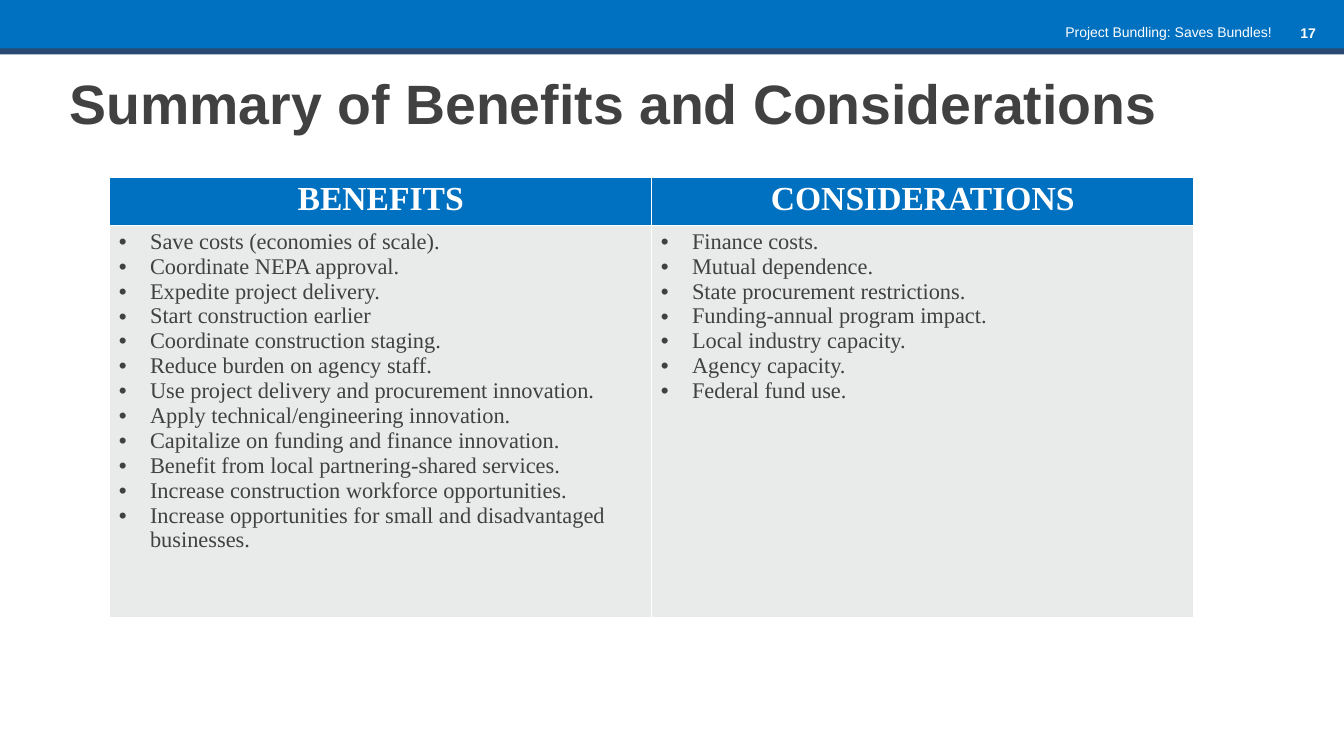
from dataclasses import dataclass

from lxml.etree import SubElement
from pptx import Presentation
from pptx.dml.color import RGBColor
from pptx.enum.shapes import MSO_SHAPE as Shape
from pptx.enum.text import MSO_ANCHOR as Anchor, MSO_AUTO_SIZE as AutoSize, PP_ALIGN as Align
from pptx.oxml.ns import qn
from pptx.util import Inches, Pt

WHITE = RGBColor(0xFF, 0xFF, 0xFF)
BLUE = RGBColor(0x00, 0x70, 0xC0)
NAVY = RGBColor(0x28, 0x49, 0x71)
CHARCOAL = RGBColor(0x41, 0x41, 0x42)
PALE_GRAY = RGBColor(0xE9, 0xEA, 0xEA)

SLIDE_WIDTH = Inches(13.33)
SLIDE_HEIGHT = Inches(7.5)
HEADING_ROW = Inches(0.46)
BODY_ROW = Inches(3.89)
CELL_SIDE = Inches(0.09)
CELL_TOP = Inches(0.04)
BULLET_INDENT = Inches(0.31)


@dataclass(frozen=True)
class Area:
    """Shares of the slide's width and height, in percent."""
    left: float
    top: float
    width: float
    height: float

    def lengths(self) -> tuple[int, int, int, int]:
        return (int(SLIDE_WIDTH * self.left / 100), int(SLIDE_HEIGHT * self.top / 100),
                int(SLIDE_WIDTH * self.width / 100), int(SLIDE_HEIGHT * self.height / 100))


@dataclass(frozen=True)
class TextStyle:
    font: str
    size: float
    color: RGBColor
    bold: bool = False
    align: Align = Align.LEFT


@dataclass(frozen=True)
class Band:
    area: Area
    color: RGBColor


@dataclass(frozen=True)
class Label:
    text: str
    area: Area
    style: TextStyle


@dataclass(frozen=True)
class Column:
    heading: str
    points: tuple[str, ...]


TITLE_STYLE = TextStyle("Arial", 39.6, CHARCOAL, bold=True)
HEADING_STYLE = TextStyle("Times New Roman", 24, WHITE, bold=True, align=Align.CENTER)
POINT_STYLE = TextStyle("Times New Roman", 16, CHARCOAL)
TITLE_AREA = Area(4.43, 7.73, 90, 11.73)
TABLE_AREA = Area(8.17, 23.4, 80.65, 58)

BANDS = (
    Band(Area(0, 0, 100, 7.07), BLUE),
    Band(Area(0, 6.4, 100, 0.8), NAVY),
)
LABELS = (
    Label("17", Area(91.15, 2.53, 7.5, 5.33),
          TextStyle("Arial", 10, WHITE, bold=True, align=Align.RIGHT)),
    Label("Project Bundling: Saves Bundles!", Area(65.87, 2.4, 29.48, 3.6),
          TextStyle("Arial", 10, WHITE, align=Align.RIGHT)),
)
COLUMNS = (
    Column("BENEFITS", (
        "Save costs (economies of scale).",
        "Coordinate NEPA approval.",
        "Expedite project delivery.",
        "Start construction earlier",
        "Coordinate construction staging.",
        "Reduce burden on agency staff.",
        "Use project delivery and procurement innovation.",
        "Apply technical/engineering innovation.",
        "Capitalize on funding and finance innovation.",
        "Benefit from local partnering-shared services.",
        "Increase construction workforce opportunities.",
        "Increase opportunities for small and disadvantaged businesses.",
    )),
    Column("CONSIDERATIONS", (
        "Finance costs.",
        "Mutual dependence.",
        "State procurement restrictions.",
        "Funding-annual program impact.",
        "Local industry capacity.",
        "Agency capacity.",
        "Federal fund use.",
    )),
)


def format_text(frame, style: TextStyle) -> None:
    for para in frame.paragraphs:
        para.alignment = style.align
        for span in para.runs:
            span.font.name = style.font
            span.font.size = Pt(style.size)
            span.font.bold = style.bold
            span.font.color.rgb = style.color


def add_band(page, band: Band) -> None:
    bar = page.shapes.add_shape(Shape.RECTANGLE, *band.area.lengths())
    bar.shadow.inherit = False
    bar.fill.solid()
    bar.fill.fore_color.rgb = band.color
    bar.line.fill.background()


def add_label(page, label: Label) -> None:
    box = page.shapes.add_textbox(*label.area.lengths())
    box.text_frame.word_wrap = True
    box.text_frame.text = label.text
    format_text(box.text_frame, label.style)


def set_title(page, text: str) -> None:
    title = page.shapes.title
    title.left, title.top, title.width, title.height = TITLE_AREA.lengths()
    frame = title.text_frame
    frame.text = text
    frame.word_wrap = True
    frame.auto_size = AutoSize.NONE
    frame.vertical_anchor = Anchor.MIDDLE
    format_text(frame, TITLE_STYLE)


def add_bullets(frame) -> None:
    for para in frame.paragraphs:
        properties = para._p.get_or_add_pPr()
        properties.set("marL", str(BULLET_INDENT))
        properties.set("indent", str(-BULLET_INDENT))
        SubElement(properties, qn("a:buFont"), typeface="Arial")
        SubElement(properties, qn("a:buChar"), char="•")


def format_cell(cell, fill: RGBColor, style: TextStyle) -> None:
    cell.margin_left = cell.margin_right = CELL_SIDE
    cell.margin_top = cell.margin_bottom = CELL_TOP
    properties = cell._tc.get_or_add_tcPr()
    for side in ("lnL", "lnR", "lnT", "lnB"):
        border = SubElement(properties, qn(f"a:{side}"), w=str(Pt(1)))
        SubElement(SubElement(border, qn("a:solidFill")), qn("a:srgbClr"), val=str(WHITE))
    cell.fill.solid()
    cell.fill.fore_color.rgb = fill
    format_text(cell.text_frame, style)


def add_comparison(page, columns: tuple[Column, ...]) -> None:
    table = page.shapes.add_table(2, len(columns), *TABLE_AREA.lengths()).table
    table.horz_banding = False
    table.rows[0].height = HEADING_ROW
    table.rows[1].height = BODY_ROW
    for index, column in enumerate(columns):
        heading, body = table.cell(0, index), table.cell(1, index)
        heading.text_frame.text = column.heading
        body.text_frame.text = "\n".join(column.points)
        add_bullets(body.text_frame)
        format_cell(heading, BLUE, HEADING_STYLE)
        format_cell(body, PALE_GRAY, POINT_STYLE)


def main() -> None:
    deck = Presentation()
    deck.slide_width = SLIDE_WIDTH
    deck.slide_height = SLIDE_HEIGHT
    page = deck.slides.add_slide(deck.slide_layouts[5])
    for band in BANDS:
        add_band(page, band)
    for label in LABELS:
        add_label(page, label)
    set_title(page, "Summary of Benefits and Considerations")
    add_comparison(page, COLUMNS)
    deck.save("out.pptx")


if __name__ == "__main__":
    main()
